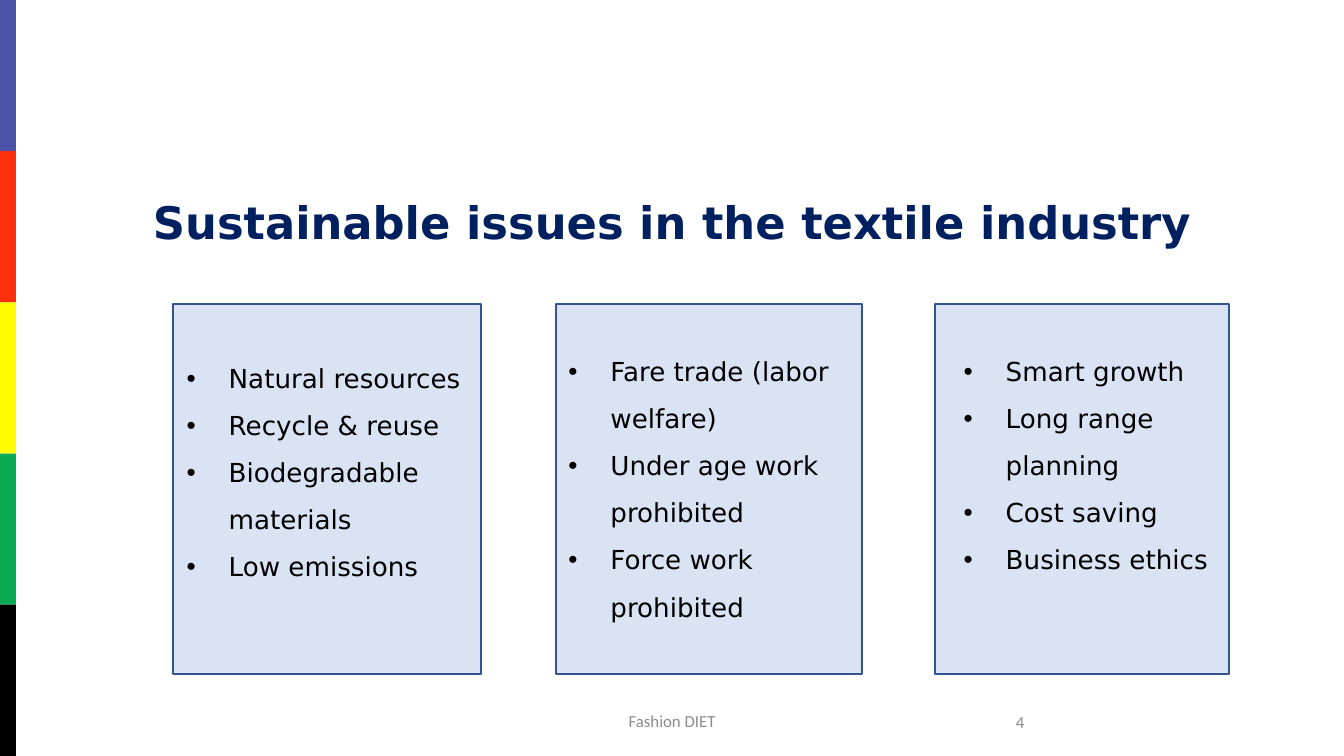
"""Build a slide on sustainable issues in the textile industry."""
from lxml.etree import SubElement
from pptx import Presentation
from pptx.dml.color import RGBColor
from pptx.enum.shapes import MSO_SHAPE
from pptx.enum.text import MSO_ANCHOR, PP_ALIGN
from pptx.oxml.ns import qn
from pptx.util import Pt

NAVY = RGBColor(0x00, 0x20, 0x60)
BLACK = RGBColor(0x00, 0x00, 0x00)
GRAY = RGBColor(0x8C, 0x8C, 0x8C)
PANEL_FILL = RGBColor(0xDA, 0xE3, 0xF3)
PANEL_LINE = RGBColor(0x32, 0x54, 0x91)
STRIPES = [
    RGBColor(0x49, 0x52, 0xA4),
    RGBColor(0xFC, 0x30, 0x0D),
    RGBColor(0xFF, 0xFB, 0x00),
    RGBColor(0x0B, 0xAA, 0x54),
    BLACK,
]

TITLE = "Sustainable issues in the textile industry"
FOOTER = "Fashion DIET"
PAGE_NUMBER = "4"
PANELS = [
    {"left": 92.9, "width": 164.9, "text_left": 92.9, "text_top": 182.2,
     "items": ["Natural resources", "Recycle & reuse",
               "Biodegradable materials", "Low emissions"]},
    {"left": 297.7, "width": 164.2, "text_left": 297.4, "text_top": 178.6,
     "items": ["Fare trade (labor welfare)", "Under age work prohibited",
               "Force work prohibited"]},
    {"left": 501.1, "width": 157.2, "text_left": 509.2, "text_top": 178.6,
     "items": ["Smart growth", "Long range planning", "Cost saving",
               "Business ethics"]},
]

PAGE_WIDTH, PAGE_HEIGHT = 720, 405
STRIPE_WIDTH = 8.6
PANEL_TOP, PANEL_HEIGHT = 162.8, 198.4
LIST_WIDTH, LINE_HEIGHT = 170.4, 25.2
BULLET_INDENT = 22.5


def add_rectangle(page, left, top, width, height, fill, line=None):
    """Draw a flat rectangle, outlined when a line colour is given."""
    box = page.shapes.add_shape(
        MSO_SHAPE.RECTANGLE, Pt(left), Pt(top), Pt(width), Pt(height))
    box.shadow.inherit = False
    box.fill.solid()
    box.fill.fore_color.rgb = fill
    if line is None:
        box.line.fill.background()
    else:
        box.line.color.rgb = line
        box.line.width = Pt(1)


def add_bullet(para):
    """Give a paragraph a hanging round bullet."""
    properties = para._p.get_or_add_pPr()
    properties.set("marL", str(Pt(BULLET_INDENT)))
    properties.set("indent", str(-Pt(BULLET_INDENT)))
    SubElement(properties, qn("a:buFont"), typeface="Arial")
    SubElement(properties, qn("a:buChar"), char="•")


def add_text(page, lines, left, top, width, height, *, size, color,
             font="DejaVu Sans", bold=False, align=PP_ALIGN.LEFT,
             anchor=MSO_ANCHOR.MIDDLE, spacing=1.0, bullets=False):
    """Place a text box with one paragraph for each line."""
    box = page.shapes.add_textbox(Pt(left), Pt(top), Pt(width), Pt(height))
    frame = box.text_frame
    frame.word_wrap = True
    frame.vertical_anchor = anchor
    for index, line in enumerate(lines):
        para = frame.add_paragraph() if index else frame.paragraphs[0]
        if bullets:
            add_bullet(para)
        para.alignment = align
        para.line_spacing = spacing
        span = para.add_run()
        span.text = line
        span.font.name = font
        span.font.size = Pt(size)
        span.font.bold = bold
        span.font.color.rgb = color


def main():
    """Assemble and save the deck."""
    deck = Presentation()
    deck.slide_width, deck.slide_height = Pt(PAGE_WIDTH), Pt(PAGE_HEIGHT)
    page = deck.slides.add_slide(deck.slide_layouts[6])

    stripe_height = PAGE_HEIGHT / len(STRIPES)
    for index, color in enumerate(STRIPES):
        add_rectangle(page, 0, index * stripe_height,
                      STRIPE_WIDTH, stripe_height, color)

    add_text(page, [FOOTER], 238.5, 375.3, 243, 21.6, size=9, color=GRAY,
             font="Calibri", align=PP_ALIGN.CENTER)
    add_text(page, [PAGE_NUMBER], 393.8, 375.8, 162, 21.6, size=9, color=GRAY,
             font="Calibri", align=PP_ALIGN.RIGHT)

    for panel in PANELS:
        add_rectangle(page, panel["left"], PANEL_TOP, panel["width"],
                      PANEL_HEIGHT, PANEL_FILL, PANEL_LINE)
        add_text(page, panel["items"], panel["text_left"], panel["text_top"],
                 LIST_WIDTH, LINE_HEIGHT * 5 + 7.2, size=14, color=BLACK,
                 anchor=MSO_ANCHOR.TOP, spacing=1.5, bullets=True)

    add_text(page, [TITLE], 49.5, 81.4, 621, 78.3, size=24, color=NAVY,
             bold=True, align=PP_ALIGN.CENTER, spacing=0.9)
    deck.save("out.pptx")


if __name__ == "__main__":
    main()
